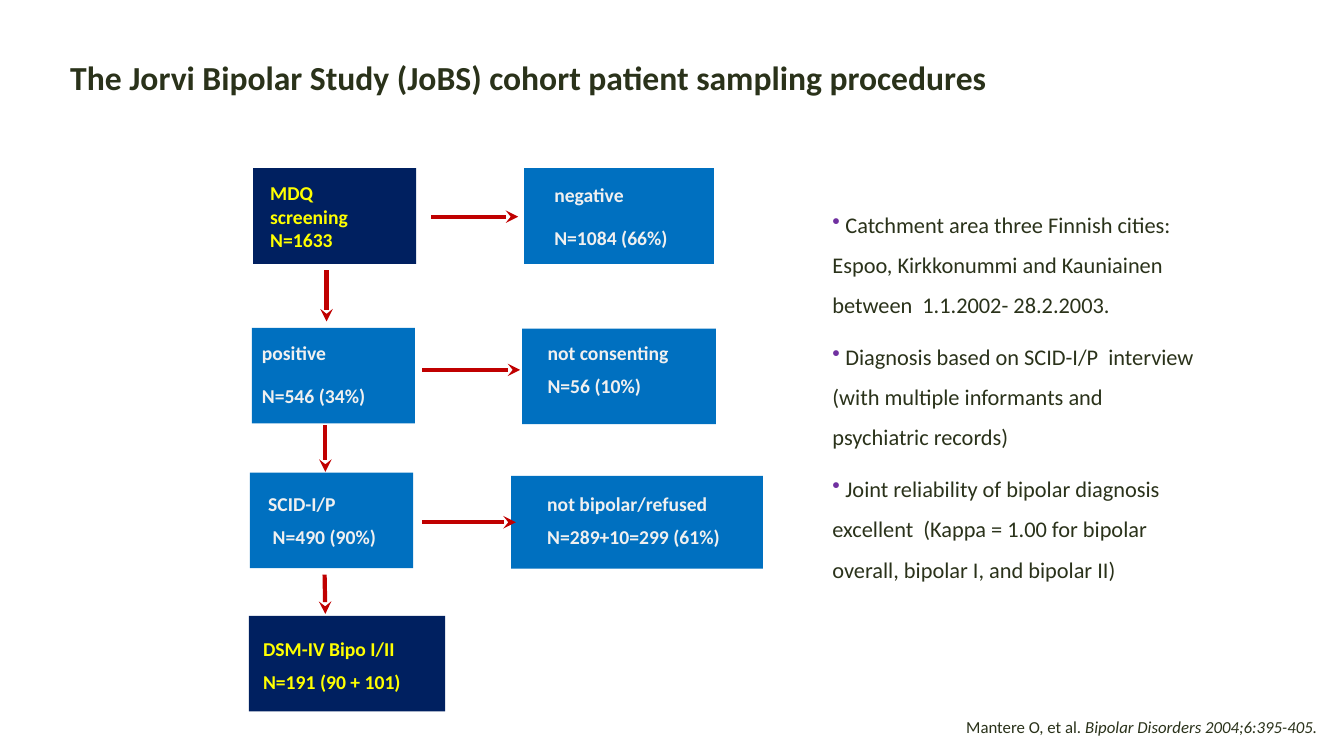
from lxml.etree import SubElement
from pptx import Presentation
from pptx.dml.color import RGBColor
from pptx.enum.shapes import MSO_CONNECTOR, MSO_SHAPE
from pptx.enum.text import MSO_ANCHOR, PP_ALIGN
from pptx.oxml.ns import qn
from pptx.util import Cm, Pt

NAVY, BLUE, RED, PURPLE = "002060", "0070C0", "C00000", "7030A0"
YELLOW, PALE, INK = "FFFF00", "F0F0F0", "2A321A"

# Content: all lengths in centimetres
TITLE = "The Jorvi Bipolar Study (JoBS) cohort patient sampling procedures"

# (left, top, width, height), (left, top, right text margins), fill, text colour, gap in points, lines
STEPS = [
    ((6.38, 4.24, 4.11, 2.41), (0.43, 0.33, 0.66), NAVY, YELLOW, 14, ["MDQ screening N=1633"]),
    ((13.21, 4.24, 4.78, 2.41), (0.76, 0.36, 0), BLUE, PALE, 14, ["negative", "N=1084 (66%)"]),
    ((6.35, 8.26, 4.11, 2.41), (0.25, 0.33, 0), BLUE, PALE, 14, ["positive", "N=546 (34%)"]),
    ((13.16, 8.28, 4.88, 2.41), (0.64, 0.3, 0), BLUE, PALE, 7, ["not consenting", "N=56 (10%)"]),
    ((6.3, 11.91, 4.11, 2.41), (0.46, 0.48, 0), BLUE, PALE, 7, ["SCID-I/P", " N=490 (90%)"]),
    ((12.88, 11.99, 6.35, 2.34), (0.91, 0.41, 0), BLUE, PALE, 7,
     ["not bipolar/refused", "N=289+10=299 (61%)"]),
    ((6.27, 15.52, 4.95, 2.41), (0.36, 0.53, 0), NAVY, YELLOW, 7,
     ["DSM-IV Bipo I/II", "N=191 (90 + 101)"]),
]

# Start x, start y, end x, end y
ARROWS = [
    (8.23, 6.81, 8.23, 8.1),
    (8.2, 10.72, 8.2, 11.89),
    (8.18, 14.48, 8.2, 15.47),
    (10.87, 5.46, 13.06, 5.46),
    (10.64, 9.32, 13.11, 9.32),
    (10.64, 13.16, 13, 13.16),
]

NOTES = [
    " Catchment area three Finnish cities: Espoo, Kirkkonummi and Kauniainen"
    " between  1.1.2002- 28.2.2003.",
    " Diagnosis based on SCID-I/P  interview (with multiple informants and psychiatric records)",
    " Joint reliability of bipolar diagnosis excellent  (Kappa = 1.00 for bipolar overall,"
    " bipolar I, and bipolar II)",
]

CITATION = [["Mantere O, et al. ", "Bipolar Disorders 2004;6:395-405."]]


def color(value):
    return RGBColor.from_string(value)


def write(box, paragraphs, size, ink=INK, bold=False, gap=0, spacing=None,
          align=PP_ALIGN.LEFT, margins=(0.25, 0.13, 0.25), bullet=None):
    """Fill a box; a paragraph is a string or a [plain, italic] pair."""
    frame = box.text_frame
    frame.word_wrap = True
    frame.vertical_anchor = MSO_ANCHOR.TOP
    frame.margin_left, frame.margin_top, frame.margin_right = map(Cm, margins)
    for index, content in enumerate(paragraphs):
        para = frame.add_paragraph() if index else frame.paragraphs[0]
        para.alignment = align
        para.line_spacing = spacing
        para.space_before = Pt(gap)
        if bullet:
            properties = para._p.get_or_add_pPr()
            tint = SubElement(properties, qn("a:buClr"))
            SubElement(tint, qn("a:srgbClr"), val=bullet)
            SubElement(properties, qn("a:buChar"), char="•")
        pieces = [content] if isinstance(content, str) else content
        for position, piece in enumerate(pieces):
            span = para.add_run()
            span.text = piece
            span.font.name = "Calibri"
            span.font.size = Pt(size)
            span.font.bold = bold
            span.font.italic = position > 0
            span.font.color.rgb = color(ink)


def add_text(page, place, paragraphs, size, **style):
    write(page.shapes.add_textbox(*map(Cm, place)), paragraphs, size, **style)


def add_step(page, place, margins, fill, ink, gap, lines):
    box = page.shapes.add_shape(MSO_SHAPE.RECTANGLE, *map(Cm, place))
    box.shadow.inherit = False
    box.fill.solid()
    box.fill.fore_color.rgb = color(fill)
    box.line.fill.background()
    write(box, lines, 14, ink=ink, bold=True, gap=gap, margins=margins)


def add_arrow(page, ends):
    arrow = page.shapes.add_connector(MSO_CONNECTOR.STRAIGHT, *map(Cm, ends))
    arrow.line.color.rgb = color(RED)
    arrow.line.width = Pt(3)
    SubElement(arrow.line._get_or_add_ln(), qn("a:tailEnd"), type="stealth")
    SubElement(arrow._element.spPr, qn("a:effectLst"))


def main():
    deck = Presentation()
    deck.slide_width, deck.slide_height = Cm(33.87), Cm(19.05)
    page = deck.slides.add_slide(deck.slide_layouts[6])

    # Title
    add_text(page, (1.52, 1.3, 25.91, 2.29), [TITLE], 24, bold=True)

    # Flow chart
    for step in STEPS:
        add_step(page, *step)
    for ends in ARROWS:
        add_arrow(page, ends)

    # Notes and citation
    add_text(page, (20.73, 3.53, 9.73, 12.57), NOTES, 16, gap=8, spacing=1.5,
             margins=(0.25, 1.45, 0.25), bullet=PURPLE)
    add_text(page, (18.34, 17.93, 15.11, 0.76), CITATION, 12, align=PP_ALIGN.RIGHT)

    deck.save("out.pptx")


if __name__ == "__main__":
    main()
